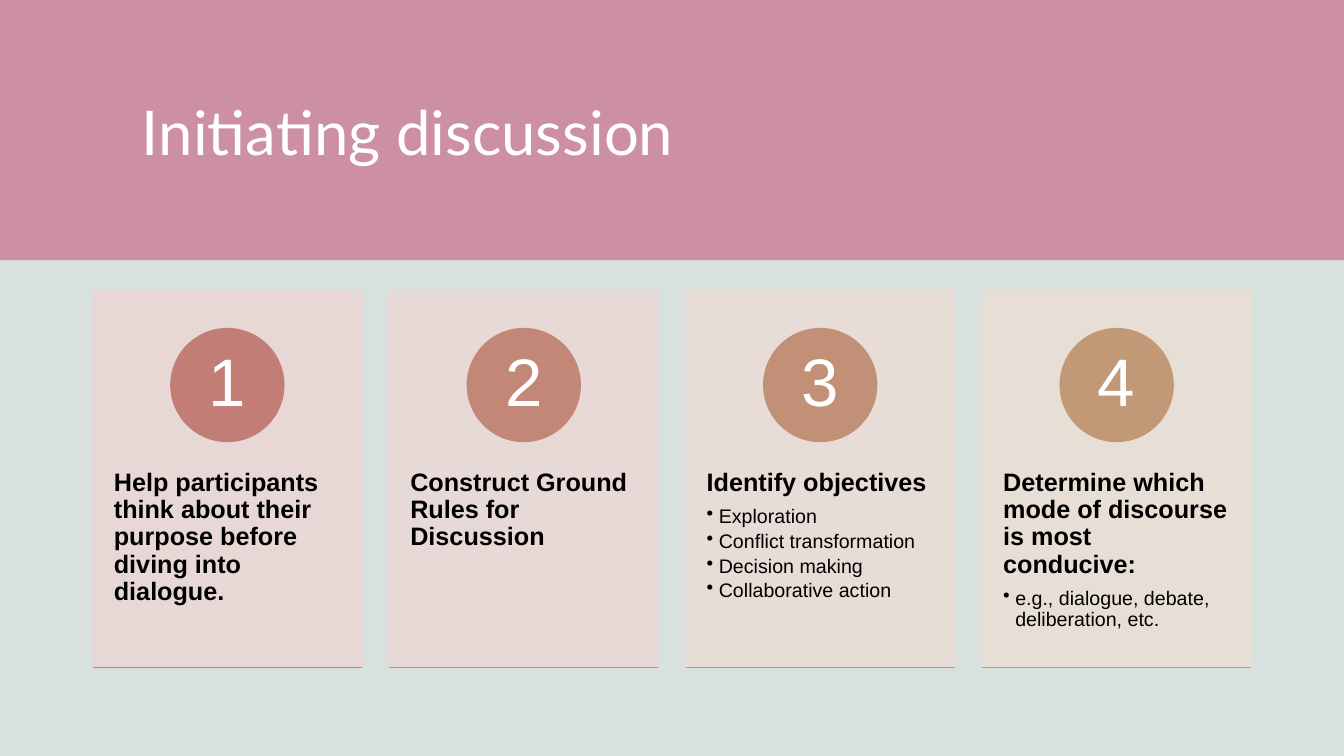
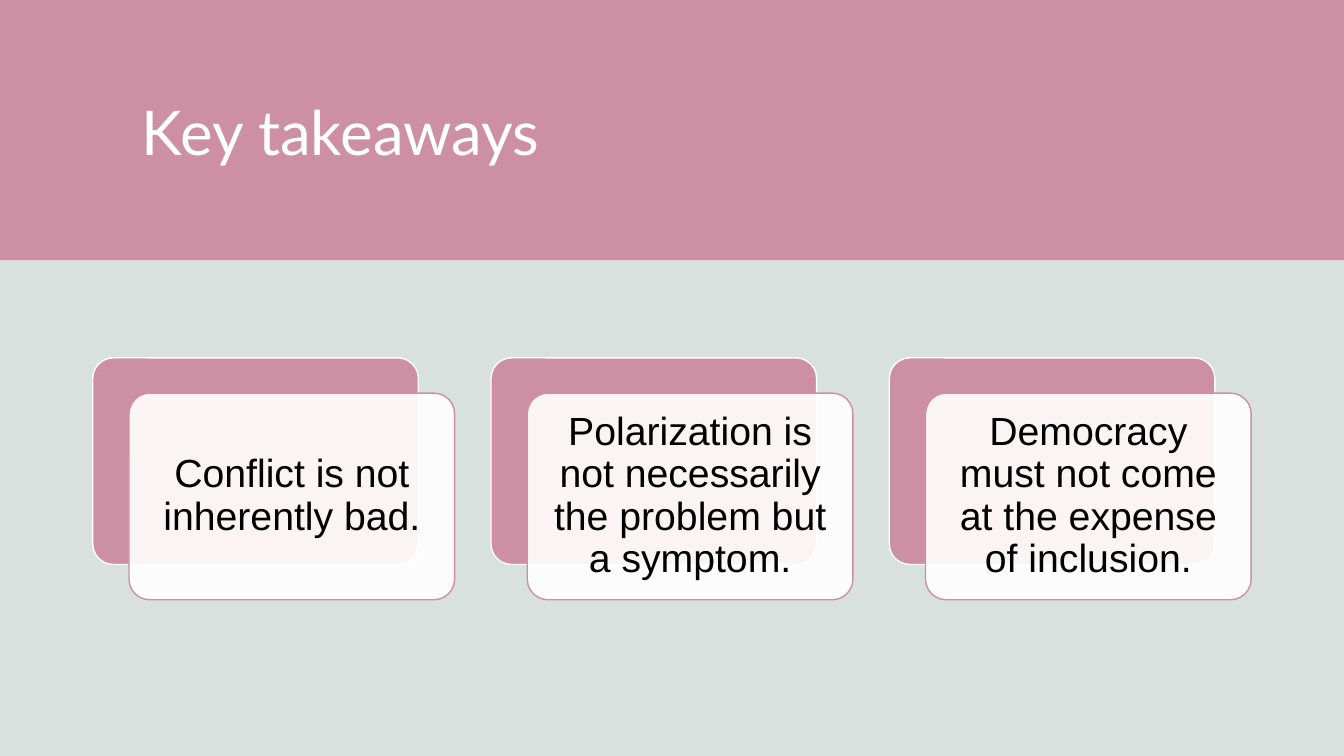
from dataclasses import dataclass

import lxml.etree
import pptx
import pptx.dml.color
import pptx.enum.shapes
import pptx.enum.text
import pptx.oxml.ns
import pptx.util

Inches = pptx.util.Inches
Pt = pptx.util.Pt
MSO_SHAPE = pptx.enum.shapes.MSO_SHAPE
PP_ALIGN = pptx.enum.text.PP_ALIGN
MSO_ANCHOR = pptx.enum.text.MSO_ANCHOR
qn = pptx.oxml.ns.qn


@dataclass(frozen=True)
class Theme:
    background: str = "D8E1DE"
    rose: str = "CD8FA3"
    white: str = "FFFFFF"
    black: str = "000000"
    title_font: str = "Lato"
    body_font: str = "Arial"
    title_size: float = 44
    number_size: float = 48
    takeaway_size: float = 28
    heading_size: float = 18
    bullet_size: float = 14
    line_spacing: float = 0.9
    translucent: int = 90
    left: float = 0.92
    content_width: float = 11.49


THEME = Theme()

STEPS = [
    ("Help participants think about their purpose before diving into dialogue.", [],
     "E9D8D6", "C27E76", "C28376"),
    ("Construct Ground Rules for Discussion", [],
     "E9DAD6", "C28776", "C28C76"),
    ("Identify objectives",
     ["Exploration", "Conflict transformation", "Decision making", "Collaborative action"],
     "E9DCD6", "C29076", "C29576"),
    ("Determine which mode of discourse is most conducive:",
     ["e.g., dialogue, debate, deliberation, etc."],
     "E9DFD6", "C29976", "C29E76"),
]

TAKEAWAYS = [
    "Conflict is not inherently bad.",
    "Polarization is not necessarily the problem but a symptom.",
    "Democracy must not come at the expense of inclusion.",
]


def rgb(value):
    return pptx.dml.color.RGBColor.from_string(value)


def spread(count, width, total):
    step = (total - width) / (count - 1)
    return [THEME.left + index * step for index in range(count)]


def set_opacity(fill_owner, percent):
    color = fill_owner.find(qn("a:solidFill")).find(qn("a:srgbClr"))
    lxml.etree.SubElement(color, qn("a:alpha"), val=str(percent * 1000))


def add_panel(slide, kind, box, fill, line=None, opacity=None, corner=None):
    panel = slide.shapes.add_shape(kind, *map(Inches, box))
    panel.shadow.inherit = False
    panel.fill.solid()
    panel.fill.fore_color.rgb = rgb(fill)
    if line:
        panel.line.color.rgb = rgb(line)
        panel.line.width = Pt(1)
    else:
        panel.line.fill.background()
    if opacity:
        set_opacity(panel.element.spPr, opacity)
    if corner:
        panel.adjustments[0] = corner
    return panel


def set_frame(shape, anchor, insets):
    frame = shape.text_frame
    frame.word_wrap = True
    frame.vertical_anchor = anchor
    frame.margin_left, frame.margin_top, frame.margin_right, frame.margin_bottom = map(Inches, insets)
    return frame


def write(paragraph, text, size, color=THEME.black, font=THEME.body_font, bold=False,
          align=PP_ALIGN.LEFT, spacing=THEME.line_spacing, after=0, bullet=False):
    paragraph.text = text
    paragraph.alignment = align
    paragraph.line_spacing = spacing
    paragraph.space_after = Pt(after)
    if bullet:
        properties = paragraph._p.get_or_add_pPr()
        properties.set("marL", str(Inches(0.12)))
        properties.set("indent", str(Inches(-0.12)))
        lxml.etree.SubElement(properties, qn("a:buChar"), char="•")
    paragraph.font.name = font
    paragraph.font.size = Pt(size)
    paragraph.font.bold = bold
    paragraph.font.color.rgb = rgb(color)


def add_rule(slide, left, top, width, color):
    rule = slide.shapes.add_connector(
        pptx.enum.shapes.MSO_CONNECTOR.STRAIGHT,
        Inches(left), Inches(top), Inches(left + width), Inches(top))
    rule.line.color.rgb = rgb(color)
    rule.line.width = Pt(1)
    lxml.etree.SubElement(rule.element.spPr, qn("a:effectLst"))


def add_titled_slide(deck, title):
    slide = deck.slides.add_slide(deck.slide_layouts[6])
    slide.background.fill.solid()
    slide.background.fill.fore_color.rgb = rgb(THEME.background)
    add_panel(slide, MSO_SHAPE.RECTANGLE, (0, 0, 13.33, 2.58), THEME.rose)
    title_box = slide.shapes.add_textbox(*map(Inches, (1.31, 0.42, 10.94, 1.75)))
    frame = set_frame(title_box, MSO_ANCHOR.MIDDLE, (0.1, 0.05, 0.1, 0.05))
    write(frame.paragraphs[0], title, THEME.title_size, THEME.white, THEME.title_font, spacing=1)
    return slide


def add_step(slide, left, width, number, step):
    heading, bullets, card_color, circle_color, rule_color = step
    top, height, diameter = 2.88, 3.74, 1.12
    card = add_panel(slide, MSO_SHAPE.RECTANGLE, (left, top, width, height),
                     card_color, card_color, THEME.translucent)
    set_opacity(card.element.spPr.find(qn("a:ln")), THEME.translucent)
    frame = set_frame(card, MSO_ANCHOR.TOP, (0.21, 1.78, 0.21, 0.36))
    write(frame.paragraphs[0], heading, THEME.heading_size, bold=True, after=7)
    for bullet in bullets:
        write(frame.add_paragraph(), bullet, THEME.bullet_size, after=2.5, bullet=True)

    circle_left = left + (width - diameter) / 2
    circle = add_panel(slide, MSO_SHAPE.OVAL, (circle_left, top + 0.38, diameter, diameter),
                       circle_color, circle_color)
    frame = set_frame(circle, MSO_ANCHOR.MIDDLE, (0, 0, 0, 0))
    write(frame.paragraphs[0], str(number), THEME.number_size, THEME.white, align=PP_ALIGN.CENTER)
    add_rule(slide, left, top + height, width, rule_color)


def add_takeaway(slide, left, width, offset, text):
    top, height = 3.55, 2.05
    add_panel(slide, MSO_SHAPE.ROUNDED_RECTANGLE, (left, top, width, height),
              THEME.rose, THEME.white, corner=0.1)
    front = add_panel(slide, MSO_SHAPE.ROUNDED_RECTANGLE,
                      (left + offset, top + 0.35, width, height),
                      THEME.white, THEME.rose, THEME.translucent, corner=0.1)
    frame = set_frame(front, MSO_ANCHOR.MIDDLE, (0.12, 0.12, 0.12, 0.12))
    write(frame.paragraphs[0], text, THEME.takeaway_size, align=PP_ALIGN.CENTER)


def build_discussion(deck):
    slide = add_titled_slide(deck, "Initiating discussion")
    width = 2.67
    lefts = spread(len(STEPS), width, THEME.content_width)
    for number, (left, step) in enumerate(zip(lefts, STEPS), start=1):
        add_step(slide, left, width, number, step)


def build_takeaways(deck):
    slide = add_titled_slide(deck, "Key takeaways")
    width, offset = 3.23, 0.36
    lefts = spread(len(TAKEAWAYS), width, THEME.content_width - offset)
    for left, text in zip(lefts, TAKEAWAYS):
        add_takeaway(slide, left, width, offset, text)


def main():
    deck = pptx.Presentation()
    deck.slide_width = Inches(13.33)
    deck.slide_height = Inches(7.5)
    build_discussion(deck)
    build_takeaways(deck)
    deck.save("out.pptx")


if __name__ == "__main__":
    main()
